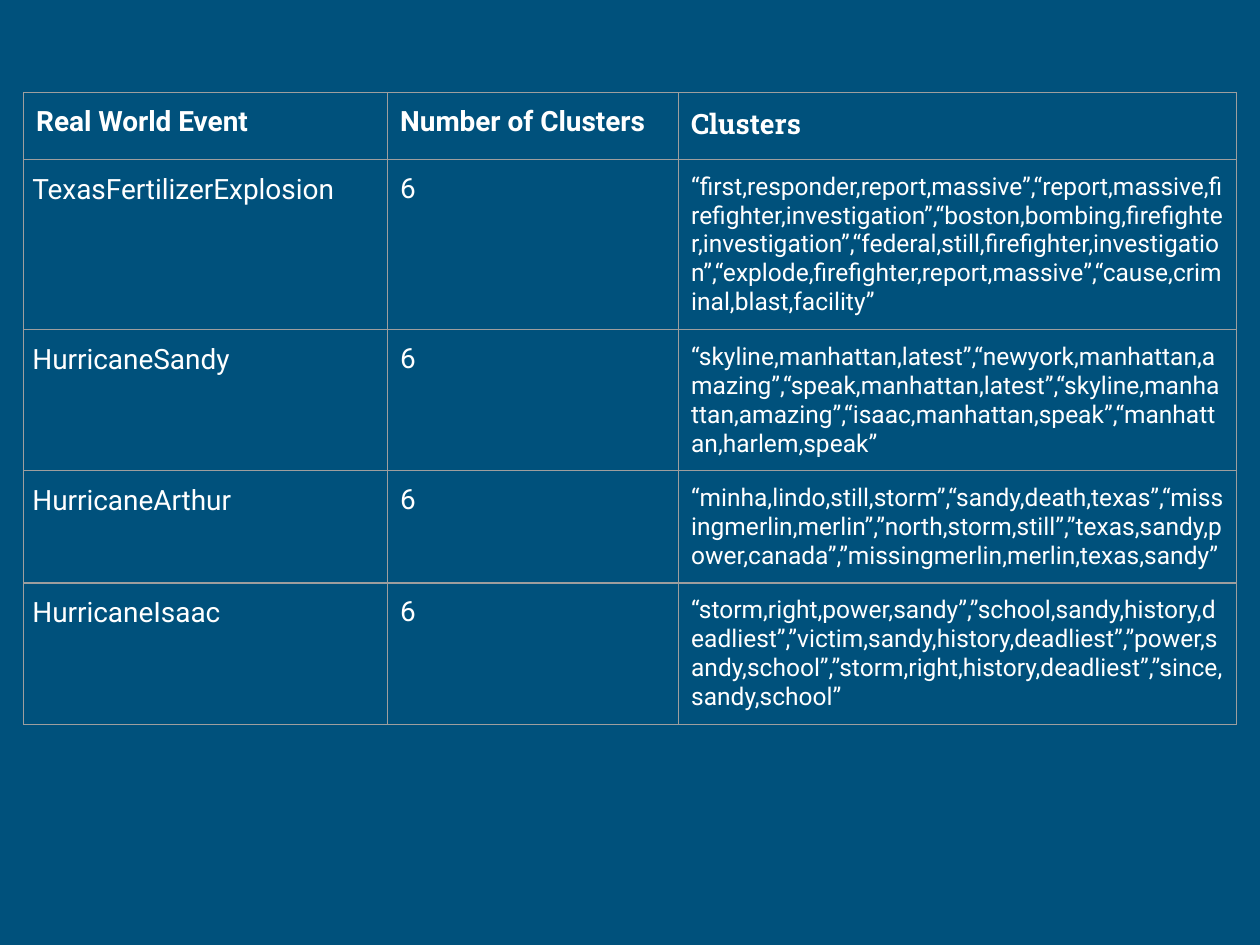
from dataclasses import dataclass

from lxml import etree
from pptx import Presentation
from pptx import util as u
from pptx.dml.color import RGBColor
from pptx.oxml.ns import qn


@dataclass(frozen=True)
class Theme:
    background: str = "00517C"
    text: str = "FFFFFF"
    border: str = "9E9E9E"
    border_width: float = 0.75
    body_font: str = "Roboto"
    slab_font: str = "Roboto Slab"
    label_size: float = 16
    cluster_size: float = 14
    inset: float = 7.2
    event_inset: float = 5.04
    event_spacing: float = 1.15


@dataclass(frozen=True)
class CellStyle:
    font: str
    size: float
    inset: float
    bold: bool = False
    spacing: float | None = None


@dataclass(frozen=True)
class Event:
    name: str
    count: int
    clusters: str
    height: float


THEME = Theme()
HEADER = CellStyle(THEME.body_font, THEME.label_size, THEME.inset, bold=True)
SLAB_HEADER = CellStyle(THEME.slab_font, THEME.label_size, THEME.inset, bold=True)
NAME = CellStyle(THEME.body_font, THEME.label_size, THEME.event_inset,
                 spacing=THEME.event_spacing)
COUNT = CellStyle(THEME.body_font, THEME.label_size, THEME.inset)
CLUSTERS = CellStyle(THEME.body_font, THEME.cluster_size, THEME.inset)

LEFT, TOP = 13.5, 53
COLUMN_WIDTHS = (208, 166.3, 319)
HEADER_HEIGHT = 38.2
HEADINGS = (
    ("Real World Event", HEADER),
    ("Number of Clusters", HEADER),
    ("Clusters", SLAB_HEADER),
)
EVENTS = (
    Event("TexasFertilizerExplosion", 6,
          "“first,responder,report,massive”,“report,massive,firefighter,investigation”,"
          "“boston,bombing,firefighter,investigation”,“federal,still,firefighter,investigation”,"
          "“explode,firefighter,report,massive”,“cause,criminal,blast,facility”", 72.7),
    Event("HurricaneSandy", 6,
          "“skyline,manhattan,latest”,“newyork,manhattan,amazing”,“speak,manhattan,latest”,"
          "“skyline,manhattan,amazing”,“isaac,manhattan,speak”,“manhattan,harlem,speak”", 53.3),
    Event("HurricaneArthur", 6,
          "“minha,lindo,still,storm”,“sandy,death,texas”,“missingmerlin,merlin”,"
          "”north,storm,still”,”texas,sandy,power,canada”,”missingmerlin,merlin,texas,sandy”",
          53.3),
    Event("HurricaneIsaac", 6,
          "“storm,right,power,sandy”,”school,sandy,history,deadliest”,"
          "”victim,sandy,history,deadliest”,”power,sandy,school”,"
          "”storm,right,history,deadliest”,”since,sandy,school”", 53.3),
)


def add_borders(cell) -> None:
    tc_pr = cell._tc.get_or_add_tcPr()
    for i, side in enumerate(("lnL", "lnR", "lnT", "lnB")):
        ln = etree.Element(qn(f"a:{side}"), w=str(u.Pt(THEME.border_width)))
        fill = etree.SubElement(ln, qn("a:solidFill"))
        etree.SubElement(fill, qn("a:srgbClr"), val=THEME.border)
        tc_pr.insert(i, ln)


def fill_cell(cell, value: str, style: CellStyle) -> None:
    cell.fill.background()
    add_borders(cell)
    inset = u.Pt(style.inset)
    cell.margin_left = cell.margin_right = inset
    cell.margin_top = cell.margin_bottom = inset
    p = cell.text_frame.paragraphs[0]
    if style.spacing:
        p.line_spacing = style.spacing
    r = p.add_run()
    r.text = value
    r.font.name = style.font
    r.font.size = u.Pt(style.size)
    r.font.bold = style.bold
    r.font.color.rgb = RGBColor.from_string(THEME.text)


def add_event_table(s) -> None:
    heights = [HEADER_HEIGHT] + [e.height for e in EVENTS]
    rows = [HEADINGS] + [
        ((e.name, NAME), (str(e.count), COUNT), (e.clusters, CLUSTERS)) for e in EVENTS
    ]
    table = s.shapes.add_table(
        len(rows), len(COLUMN_WIDTHS), u.Pt(LEFT), u.Pt(TOP),
        u.Pt(sum(COLUMN_WIDTHS)), u.Pt(sum(heights)),
    ).table
    table.first_row = table.horz_banding = False
    for column, width in zip(table.columns, COLUMN_WIDTHS):
        column.width = u.Pt(width)
    for row, height, values in zip(table.rows, heights, rows):
        row.height = u.Pt(height)
        for cell, (value, style) in zip(row.cells, values):
            fill_cell(cell, value, style)


def main() -> None:
    prs = Presentation()
    prs.slide_width, prs.slide_height = u.Pt(720), u.Pt(540)
    s = prs.slides.add_slide(prs.slide_layouts[6])
    s.background.fill.solid()
    s.background.fill.fore_color.rgb = RGBColor.from_string(THEME.background)
    add_event_table(s)
    prs.save("out.pptx")


if __name__ == "__main__":
    main()
